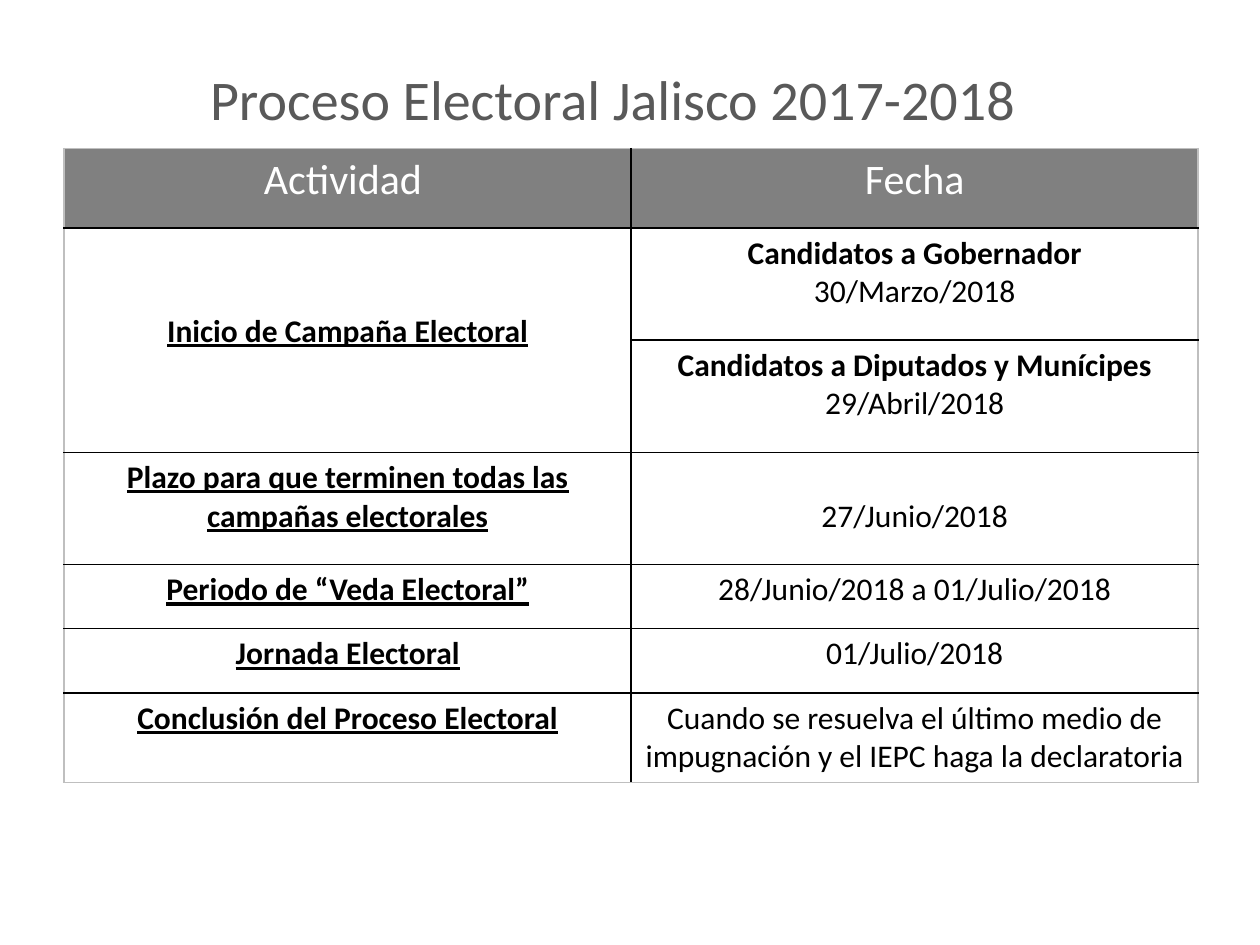
from pptx import Presentation, util as u
from pptx.dml.color import RGBColor
from pptx.enum import text
from pptx.oxml import parse_xml
from pptx.oxml.ns import nsdecls

TITLE = "Proceso Electoral Jalisco 2017-2018"
HEAD = {"size": u.Pt(24), "bold": False, "underline": False}
TASK = {"size": u.Pt(18), "bold": True, "underline": True}
NAME = {"size": u.Pt(18), "bold": True, "underline": False}
DATE = {"size": u.Pt(18), "bold": False, "underline": False}
ROWS = [
    (0.63, [("Actividad ", HEAD)], [("Fecha", HEAD)]),
    (0.89, [("Inicio de Campaña Electoral", TASK)],
     [("Candidatos a Gobernador", NAME), ("30/Marzo/2018", DATE)]),
    (0.89, [], [("Candidatos a Diputados y Munícipes", NAME), ("29/Abril/2018", DATE)]),
    (0.89, [("Plazo para que terminen todas las campañas electorales", TASK)],
     [("27/Junio/2018", DATE)]),
    (0.51, [("Periodo de “Veda Electoral”", TASK)],
     [("28/Junio/2018 a 01/Julio/2018", DATE)]),
    (0.51, [("Jornada Electoral", TASK)], [("01/Julio/2018", DATE)]),
    (0.65, [("Conclusión del Proceso Electoral", TASK)],
     [("Cuando se resuelva el último medio de impugnación y el IEPC haga la declaratoria ", DATE)]),
]
PADS = {
    (1, 0): {"vertical_anchor": text.MSO_ANCHOR.MIDDLE, "margin_bottom": u.Inches(0.19)},
    (3, 1): {"margin_top": u.Inches(0.36)},
}


def put(item, form):
    for key, val in form.items():
        setattr(item, key, val)


def tint(part, color):
    part.rgb = RGBColor.from_string(color)


def write(frame, lines, color):
    for i, (words, form) in enumerate(lines):
        para = frame.add_paragraph() if i else frame.paragraphs[0]
        para.alignment = text.PP_ALIGN.CENTER
        run = para.add_run()
        run.text = words
        put(run.font, {"name": "Calibri", **form})
        tint(run.font.color, color)


def edge(cell, row, col):
    outer = {"L": col == 0, "R": col == 1, "T": row == 0, "B": row == len(ROWS) - 1}
    for side, rim in outer.items():
        color = "BFBFBF" if rim else "000000"
        cell._tc.get_or_add_tcPr().append(parse_xml(
            f'<a:ln{side} {nsdecls("a")} w="12700"><a:solidFill>'
            f'<a:srgbClr val="{color}"/></a:solidFill></a:ln{side}>'))


deck = Presentation()
put(deck, {"slide_width": u.Inches(10), "slide_height": u.Inches(7.5)})
slide = deck.slides.add_slide(deck.slide_layouts[5])

title = slide.shapes.title
put(title, {"left": u.Inches(0.67), "top": u.Inches(0.36),
            "width": u.Inches(8.39), "height": u.Inches(0.84)})
title.text_frame.vertical_anchor = text.MSO_ANCHOR.MIDDLE
write(title.text_frame, [(TITLE, {"size": u.Pt(32)})], "595959")

high = sum(row[0] for row in ROWS)
table = slide.shapes.add_table(len(ROWS), 2, u.Inches(0.51), u.Inches(1.18),
                               u.Inches(9), u.Inches(high)).table
put(table, {"first_row": False, "horz_banding": False})
table.cell(1, 0).merge(table.cell(2, 0))

for r, (tall, *cells) in enumerate(ROWS):
    table.rows[r].height = u.Inches(tall)
    for c, lines in enumerate(cells):
        cell = table.cell(r, c)
        edge(cell, r, c)
        if r == 0:
            cell.fill.solid()
            tint(cell.fill.fore_color, "808080")
        else:
            cell.fill.background()
        write(cell.text_frame, lines, "000000" if r else "FFFFFF")
        put(cell, PADS.get((r, c), {}))

deck.save("out.pptx")
